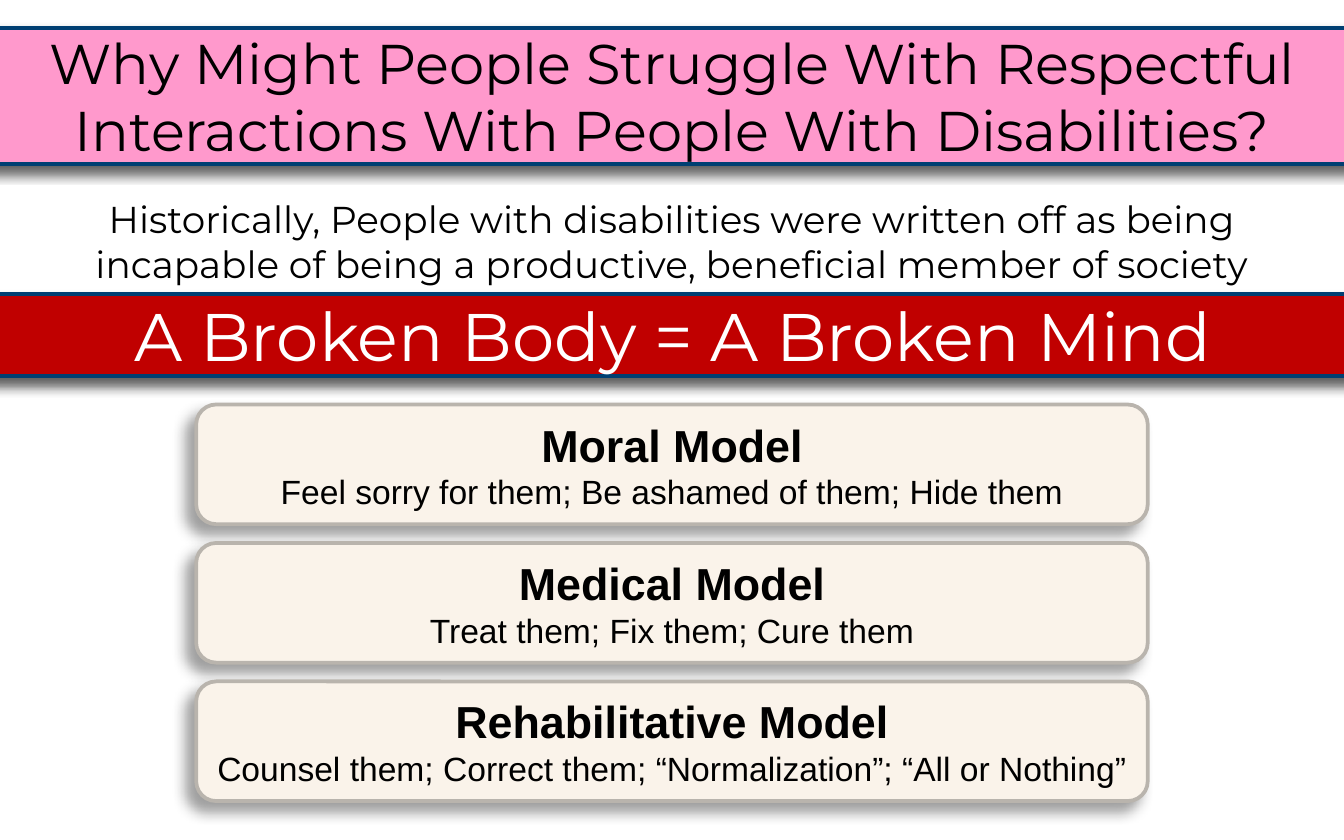
"""Build a slide on why people struggle with respectful interactions."""
import lxml.etree
import pptx
import pptx.dml.color
import pptx.enum.shapes
import pptx.enum.text
import pptx.oxml.ns
import pptx.util

Inches = pptx.util.Inches
Pt = pptx.util.Pt
Shape = pptx.enum.shapes.MSO_SHAPE
Anchor = pptx.enum.text.MSO_ANCHOR


def color(code):
    return pptx.dml.color.RGBColor.from_string(code)


class Deck:
    head = "Montserrat"
    body = "Arial"
    ink = "000000"
    navy = "003F72"

    def __init__(self, slide):
        self.slide = slide

    def label(self, shape, lines, inset=(0, 0), anchor=Anchor.TOP):
        frame = shape.text_frame
        frame.word_wrap = True
        frame.auto_size = pptx.enum.text.MSO_AUTO_SIZE.SHAPE_TO_FIT_TEXT
        frame.vertical_anchor = anchor
        frame.margin_left = frame.margin_right = Inches(inset[0])
        frame.margin_top = frame.margin_bottom = Inches(inset[1])
        for i, (text, size, font, ink, bold) in enumerate(lines):
            para = frame.add_paragraph() if i else frame.paragraphs[0]
            para.alignment = pptx.enum.text.PP_ALIGN.CENTER
            run = para.add_run()
            run.text = text
            run.font.size = Pt(size)
            run.font.name = font
            run.font.bold = bold
            run.font.color.rgb = color(ink)

    def shade(self, shape, code, alpha, blur, dist, angle):
        shape.shadow.inherit = False
        qn = pptx.oxml.ns.qn
        effects = shape._element.spPr.find(qn("a:effectLst"))
        outer = lxml.etree.SubElement(
            effects, qn("a:outerShdw"), blurRad=str(Pt(blur)),
            dist=str(Pt(dist)), dir=str(angle * 60000), rotWithShape="0")
        tint = lxml.etree.SubElement(outer, qn("a:srgbClr"), val=code)
        lxml.etree.SubElement(tint, qn("a:alpha"), val=str(alpha * 1000))

    def box(self, kind, area, fill, line, width):
        shape = self.slide.shapes.add_shape(kind, *map(Inches, area))
        shape.fill.solid()
        shape.fill.fore_color.rgb = color(fill)
        shape.line.color.rgb = color(line)
        shape.line.width = Pt(width)
        return shape

    def note(self, area, text, size):
        shape = self.slide.shapes.add_textbox(*map(Inches, area))
        self.label(shape, [(text, size, self.head, self.ink, False)])

    def band(self, top, height, fill, text, size, ink, side=0):
        area = (-0.08, top, 10.17, height)
        shape = self.box(Shape.RECTANGLE, area, fill, self.navy, 2.25)
        self.shade(shape, "000000", 61, 6, 4, 90)
        self.label(shape, [(text, size, self.head, ink, False)], (side, 0))

    def card(self, top, title, text):
        area = (1.46, top, 7.08, 0.89)
        shape = self.box(Shape.ROUNDED_RECTANGLE, area, "FAF3EA", "B9B4AD", 2)
        self.shade(shape, "3A3A3A", 47, 7, 7, 140)
        lines = [(title, 24, self.body, self.ink, True),
                 (text, 18, self.body, self.ink, False)]
        self.label(shape, lines, (0.05, 0.05), Anchor.MIDDLE)


def main():
    show = pptx.Presentation()
    show.slide_width = Inches(10)
    show.slide_height = Inches(6.25)
    deck = Deck(show.slides.add_slide(show.slide_layouts[6]))
    deck.note((0.25, 1.46, 9.5, 0.67),
              "Historically, People with disabilities were written off as being "
              "incapable of being a productive, beneficial member of society", 20)
    deck.band(2.19, 0.61, "C00000", "A Broken Body = A Broken Mind", 36, "FFFFFF")
    models = [
        ("Moral Model", "Feel sorry for them; Be ashamed of them; Hide them"),
        ("Medical Model", "Treat them; Fix them; Cure them"),
        ("Rehabilitative Model",
         "Counsel them; Correct them; “Normalization”; “All or Nothing”"),
    ]
    for i, (title, text) in enumerate(models):
        deck.card(3.01 + 1.03 * i, title, text)
    deck.band(0.21, 1.01, "FF99CC",
              "Why Might People Struggle With Respectful "
              "Interactions With People With Disabilities?", 30, deck.ink, 0.1)
    show.save("out.pptx")


if __name__ == "__main__":
    main()
